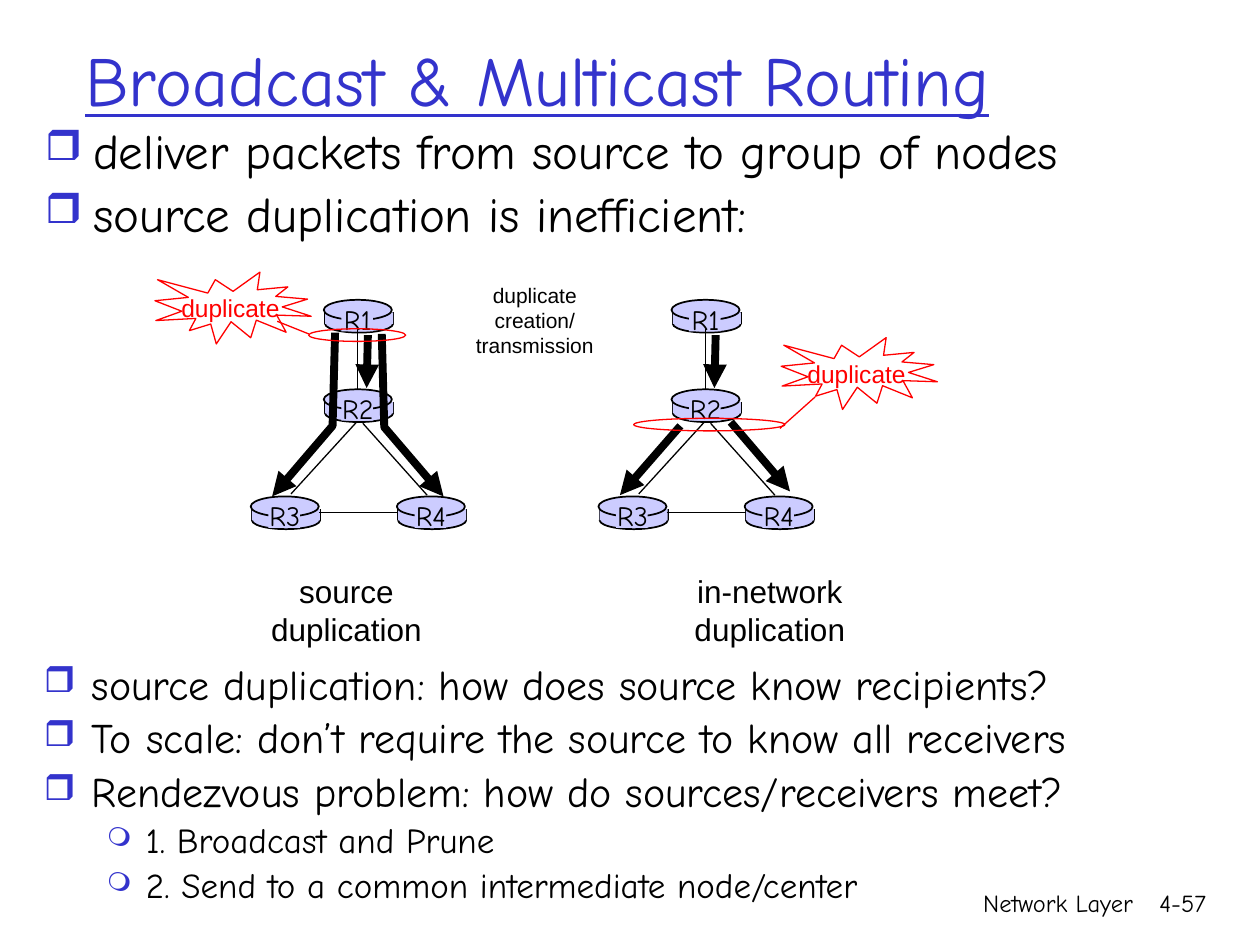
from dataclasses import dataclass

from lxml import etree
from pptx import Presentation
from pptx.dml.color import RGBColor
from pptx.enum import shapes, text
from pptx.oxml.ns import qn
from pptx.util import Inches, Pt

BLACK = RGBColor(0, 0, 0)
RED = RGBColor(0xFF, 0, 0)
BLUE = RGBColor(0x33, 0x33, 0xCC)
LILAC = RGBColor(0xCC, 0xCC, 0xFF)
COMIC, ARIAL = "Comic Neue", "Arial"
LEFT, CENTER, RIGHT = text.PP_ALIGN.LEFT, text.PP_ALIGN.CENTER, text.PP_ALIGN.RIGHT
OVAL, RECT = shapes.MSO_SHAPE.OVAL, shapes.MSO_SHAPE.RECTANGLE
BURST = shapes.MSO_SHAPE.EXPLOSION1
Point = tuple[float, float]
Box = tuple[float, float, float, float]


@dataclass(frozen=True)
class Router:
    name: str
    x: float
    y: float


@dataclass(frozen=True)
class Level:
    depth: int
    margin: float
    hang: float
    mark: str
    mark_pct: int


@dataclass(frozen=True)
class Bullet:
    text: str
    size: int
    level: Level


@dataclass(frozen=True)
class Callout:
    burst: Point
    ring: Box
    start: Point
    end: Point


@dataclass(frozen=True)
class Panel:
    dx: float
    caption: str
    caption_x: float
    arrows: list[list[Point]]
    callout: Callout


MAIN = Level(0, 0.38, 0.38, "❒", 85)
SUB = Level(1, 0.81, 0.31, "❍", 75)
ROUTERS = [Router("R1", 2.57, 2.38), Router("R2", 2.57, 3.09),
           Router("R3", 1.99, 3.94), Router("R4", 3.15, 3.94)]
LINKS = [((2.84, 2.61), (2.84, 3.09)), ((2.83, 3.35), (2.31, 3.92)),
         ((2.88, 3.36), (3.39, 3.93)), ((2.53, 4.07), (3.16, 4.07))]
PANELS = [
    Panel(0, "source\vduplication", 2.05,
          [[(3.03, 2.65), (3.05, 3.39), (3.52, 3.94)],
           [(2.66, 2.64), (2.64, 3.38), (2.16, 3.94)]],
          Callout((1.23, 2.16), (2.45, 2.61, 0.77, 0.1), (2.45, 2.65), (2.2, 2.55))),
    Panel(2.76, "in-network\nduplication", 5.41,
          [[(5.8, 3.35), (6.27, 3.9)], [(5.4, 3.38), (4.92, 3.93)]],
          Callout((6.2, 2.68), (5.03, 3.32, 1.2, 0.1), (6.47, 3.15), (6.19, 3.4))),
]
TOP_BULLETS = [
    Bullet("deliver packets from source to group of nodes", 28, MAIN),
    Bullet("source duplication is inefficient:", 28, MAIN),
]
BOTTOM_BULLETS = [
    Bullet("source duplication: how does source know recipients?", 24, MAIN),
    Bullet("To scale: don’t require the source to know all receivers", 24, MAIN),
    Bullet("Rendezvous problem: how do sources/receivers meet?", 24, MAIN),
    Bullet("1. Broadcast and Prune", 20, SUB),
    Bullet("2. Send to a common intermediate node/center", 20, SUB),
]


def add_arrowhead(sp) -> None:
    ln = sp.element.spPr.find(qn("a:ln"))
    etree.SubElement(ln, qn("a:tailEnd"), type="triangle")


def add_line(s, start: Point, end: Point, color=BLACK, width=0.75):
    c = s.shapes.add_connector(shapes.MSO_CONNECTOR.STRAIGHT,
                               *(Inches(v) for v in start + end))
    c.line.color.rgb = color
    c.line.width = Pt(width)
    etree.SubElement(c.element.spPr, qn("a:effectLst"))
    return c


def add_shape(s, kind, box: Box, fill=None, line=None, width=0.75) -> None:
    sp = s.shapes.add_shape(kind, *(Inches(v) for v in box))
    sp.shadow.inherit = False
    if fill is None:
        sp.fill.background()
    else:
        sp.fill.solid()
        sp.fill.fore_color.rgb = fill
    if line is None:
        sp.line.fill.background()
    else:
        sp.line.color.rgb = line
        sp.line.width = Pt(width)


def style_runs(p, size: int, font: str, color, underline=None) -> None:
    for r in p.runs:
        r.font.size = Pt(size)
        r.font.name = font
        r.font.color.rgb = color
        r.font.underline = underline


def add_text(s, box: Box, content: str, size: int, font=COMIC, color=BLACK,
             align=LEFT, wrap=True, underline=None,
             anchor=text.MSO_ANCHOR.TOP) -> None:
    tf = s.shapes.add_textbox(*(Inches(v) for v in box)).text_frame
    tf.word_wrap = wrap
    tf.vertical_anchor = anchor
    tf.text = content
    for p in tf.paragraphs:
        p.alignment = align
        style_runs(p, size, font, color, underline)


def add_bullets(s, box: Box, bullets: list[Bullet]) -> None:
    tf = s.shapes.add_textbox(*(Inches(v) for v in box)).text_frame
    tf.word_wrap = True
    for i, b in enumerate(bullets):
        p = tf.add_paragraph() if i else tf.paragraphs[0]
        p.text = b.text
        p.level = b.level.depth
        p.line_spacing = 0.9
        style_runs(p, b.size, COMIC, BLACK)
        pPr = p._p.get_or_add_pPr()
        pPr.set("marL", str(Inches(b.level.margin)))
        pPr.set("indent", str(-Inches(b.level.hang)))
        before = etree.SubElement(pPr, qn("a:spcBef"))
        etree.SubElement(before, qn("a:spcPct"), val="20000")
        color = etree.SubElement(pPr, qn("a:buClr"))
        etree.SubElement(color, qn("a:srgbClr"), val=str(BLUE))
        etree.SubElement(pPr, qn("a:buSzPct"), val=str(b.level.mark_pct * 1000))
        etree.SubElement(pPr, qn("a:buChar"), char=b.level.mark)


def add_router(s, router: Router, dx: float) -> None:
    x, y = router.x + dx, router.y
    add_shape(s, OVAL, (x + 0.01, y + 0.12, 0.54, 0.14), LILAC, BLACK, 1)
    for side in (x + 0.01, x + 0.55):
        add_line(s, (side, y + 0.1), (side, y + 0.19), width=1)
    add_shape(s, RECT, (x + 0.01, y + 0.1, 0.54, 0.09), LILAC)
    add_shape(s, OVAL, (x, y, 0.54, 0.16), LILAC, BLACK, 1)
    add_shape(s, RECT, (x + 0.14, y + 0.02, 0.25, 0.23), LILAC)
    add_text(s, (x + 0.03, y - 0.03, 0.48, 0.37), router.name, 16,
             align=CENTER, wrap=False)


def add_thick_arrow(s, points: list[Point]) -> None:
    start, *rest = [(Inches(x), Inches(y)) for x, y in points]
    builder = s.shapes.build_freeform(*start, scale=1.0)
    builder.add_line_segments(rest, close=False)
    sp = builder.convert_to_shape()
    sp.shadow.inherit = False
    sp.fill.background()
    sp.line.color.rgb = BLACK
    sp.line.width = Pt(4.5)
    add_arrowhead(sp)


def add_callout(s, c: Callout) -> None:
    x, y = c.burst
    add_shape(s, BURST, (x, y, 1.24, 0.57), line=RED)
    add_text(s, (x + 0.11, y + 0.12, 0.98, 0.33), "duplicate", 14, ARIAL, RED,
             wrap=False)
    add_shape(s, OVAL, c.ring, line=RED)
    add_line(s, c.start, c.end, RED)


def add_panel(s, panel: Panel) -> None:
    dx = panel.dx
    for router in ROUTERS:
        add_router(s, router, dx)
    for (x1, y1), (x2, y2) in LINKS:
        add_line(s, (x1 + dx, y1), (x2 + dx, y2))
    add_text(s, (panel.caption_x, 4.49, 1.4, 0.7), panel.caption, 18, ARIAL,
             align=CENTER, wrap=False)
    add_arrowhead(add_line(s, (2.92 + dx, 2.66), (2.91 + dx, 3.08), width=4.5))
    for points in panel.arrows:
        add_thick_arrow(s, points)
    add_callout(s, panel.callout)


def main() -> None:
    prs = Presentation()
    prs.slide_width, prs.slide_height = Inches(10), Inches(7.5)
    s = prs.slides.add_slide(prs.slide_layouts[6])
    add_text(s, (5.92, 7, 3.17, 0.5), "Network Layer", 14, align=RIGHT)
    add_text(s, (8.93, 7, 0.74, 0.5), "4-57", 14, align=RIGHT)
    for panel in PANELS:
        add_panel(s, panel)
    add_text(s, (3.36, 2.19, 1.77, 0.5), "duplicate\ncreation/transmission", 12,
             ARIAL, align=CENTER)
    add_text(s, (0.58, 0, 8.5, 1.25), "Broadcast & Multicast Routing", 40,
             color=BLUE, underline=True, anchor=text.MSO_ANCHOR.MIDDLE)
    add_bullets(s, (0.26, 0.96, 9.38, 1.06), TOP_BULLETS)
    add_bullets(s, (0.25, 5.22, 9.51, 1.06), BOTTOM_BULLETS)
    prs.save("out.pptx")


if __name__ == "__main__":
    main()
